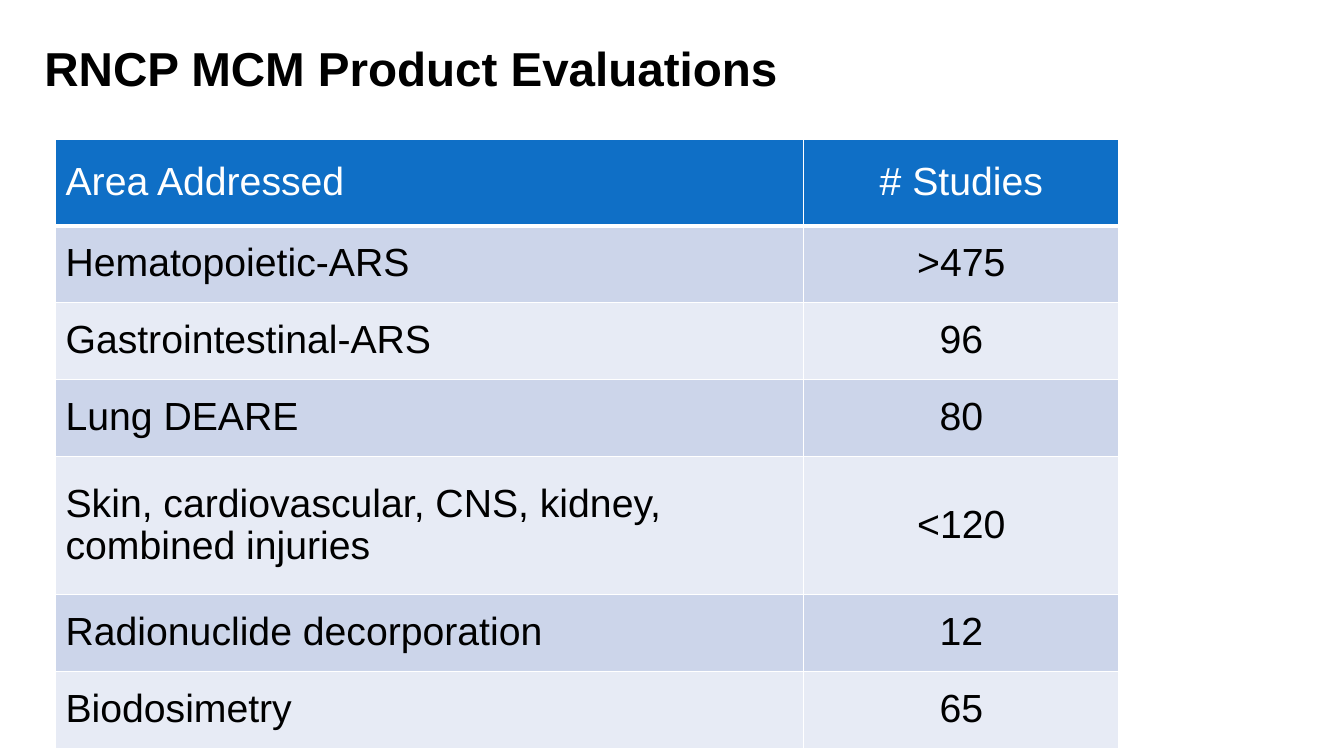
"""Build the slide of RNCP MCM product evaluations."""
from lxml import etree
from pptx import Presentation
from pptx.dml.color import RGBColor
from pptx.enum.text import MSO_ANCHOR, PP_ALIGN
from pptx.oxml.ns import qn
from pptx.util import Cm, Pt

MIDDLE = MSO_ANCHOR.MIDDLE
ALIGNS = (PP_ALIGN.LEFT, PP_ALIGN.CENTER)

TITLE = "RNCP MCM Product Evaluations"
STUDIES = [
    ("Area Addressed", "# Studies"),
    ("Hematopoietic-ARS", ">475"),
    ("Gastrointestinal-ARS", "96"),
    ("Lung DEARE", "80"),
    ("Skin, cardiovascular, CNS, kidney, combined injuries", "<120"),
    ("Radionuclide decorporation", "12"),
    ("Biodosimetry", "65"),
]
COL_WIDTHS = (18.85, 7.95)
HEADER_HEIGHT, ROW_HEIGHT, TALL_HEIGHT = 2.18, 1.94, 3.48
TALL_ROW = 4
HEADER_FILL = "0F6FC6"
BAND_FILLS = ("E7EBF5", "CCD5EA")
WHITE, BLACK = "FFFFFF", "000000"


def rgb(value):
    return RGBColor.from_string(value)


def add_run(p, text, size, color, bold=False):
    r = p.add_run()
    r.text = text
    r.font.name = "Arial"
    r.font.size = Pt(size)
    r.font.bold = bold
    r.font.color.rgb = rgb(color)


def set_borders(cell, bottom):
    tc_pr = cell._tc.get_or_add_tcPr()
    for i, (side, width) in enumerate(zip("LRTB", (1, 1, 1, bottom))):
        ln = etree.Element(qn(f"a:ln{side}"), w=str(Pt(width)))
        fill = etree.SubElement(ln, qn("a:solidFill"))
        etree.SubElement(fill, qn("a:srgbClr"), val=WHITE)
        tc_pr.insert(i, ln)


def row_height(row):
    return {0: HEADER_HEIGHT, TALL_ROW: TALL_HEIGHT}.get(row, ROW_HEIGHT)


def add_title(s):
    tf = s.shapes.add_textbox(Cm(1.12), Cm(0.79), Cm(27.97), Cm(2.21)).text_frame
    tf.word_wrap = True
    tf.margin_left = tf.margin_right = tf.margin_bottom = 0
    tf.margin_top = Cm(0.2)
    add_run(tf.paragraphs[0], TITLE, 34, BLACK, True)


def add_studies(s):
    heights = [row_height(i) for i in range(len(STUDIES))]
    table = s.shapes.add_table(len(STUDIES), len(COL_WIDTHS), Cm(1.4), Cm(3.51),
                               Cm(sum(COL_WIDTHS)), Cm(sum(heights))).table
    for col, width in zip(table.columns, COL_WIDTHS):
        col.width = Cm(width)
    for i, texts in enumerate(STUDIES):
        table.rows[i].height = Cm(heights[i])
        for j, text in enumerate(texts):
            cell = table.cell(i, j)
            cell.vertical_anchor = MIDDLE
            cell.fill.solid()
            cell.fill.fore_color.rgb = rgb(BAND_FILLS[i % 2] if i else HEADER_FILL)
            set_borders(cell, 1 if i else 3)
            p = cell.text_frame.paragraphs[0]
            p.alignment = ALIGNS[j]
            p.line_spacing = 0.95
            add_run(p, text, 28, BLACK if i else WHITE)


def main():
    prs = Presentation()
    prs.slide_width, prs.slide_height = Cm(33.87), Cm(19.05)
    s = prs.slides.add_slide(prs.slide_layouts[6])
    add_title(s)
    add_studies(s)
    prs.save("out.pptx")


if __name__ == "__main__":
    main()
